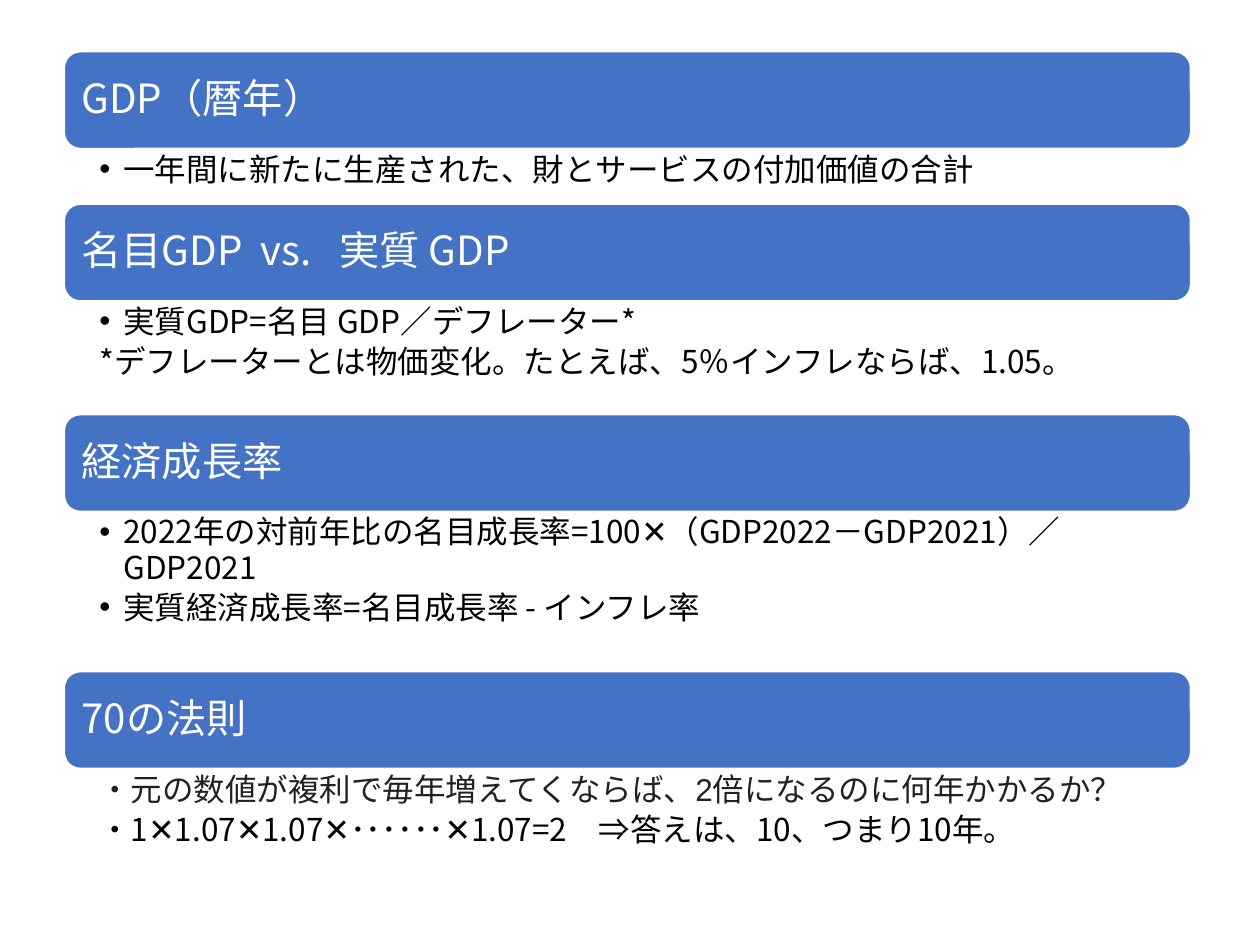
from dataclasses import dataclass

from lxml.etree import SubElement
from pptx import Presentation
from pptx.dml.color import RGBColor
from pptx.enum.shapes import MSO_SHAPE
from pptx.enum.text import MSO_ANCHOR, PP_ALIGN
from pptx.oxml.ns import qn
from pptx.util import Inches, Pt


@dataclass(frozen=True)
class Theme:
    """Colours, fonts and type sizes of the slide."""
    blue: str = "4472C4"
    white: str = "FFFFFF"
    black: str = "000000"
    charcoal: str = "202124"
    font: str = "Noto Sans CJK JP"
    question_font: str = "Arial"
    heading_size: float = 23
    body_size: float = 18


THEME = Theme()
LEFT, TOP, WIDTH = 0.51, 0.41, 8.94
HEADING_HEIGHT = 0.77
HANGING = 0.19

SECTIONS = [
    ("GDP（暦年）", 0.44, [
        ("一年間に新たに生産された、財とサービスの付加価値の合計", {"bullet": True}),
    ]),
    ("名目GDP  vs.   実質 GDP", 0.9, [
        ("実質GDP=名目 GDP／デフレーター*", {"bullet": True}),
        ("*デフレーターとは物価変化。たとえば、5％インフレならば、1.05。", {}),
    ]),
    ("経済成長率", 1.27, [
        ("2022年の対前年比の名目成長率=100✕（GDP2022－GDP2021）／GDP2021", {"bullet": True}),
        ("実質経済成長率=名目成長率 - インフレ率", {"bullet": True}),
    ]),
    ("70の法則", 0.91, [
        ("・元の数値が複利で毎年増えてくならば、2倍になるのに何年かかるか？",
         {"font": THEME.question_font, "color": THEME.charcoal}),
        ("・1✕1.07✕1.07✕･･････✕1.07=2　⇒答えは、10、つまり10年。", {}),
    ]),
]


def set_margins(frame, left, top, right, bottom):
    """Wrap the text and set its four insets in inches."""
    frame.word_wrap = True
    frame.margin_left, frame.margin_top = Inches(left), Inches(top)
    frame.margin_right, frame.margin_bottom = Inches(right), Inches(bottom)


def write_text(para, text, size=THEME.body_size, color=THEME.black, font=THEME.font,
               spacing=Pt(20), after=3, hanging=HANGING, bullet=False):
    """Write one formatted paragraph."""
    para.alignment = PP_ALIGN.LEFT
    para.line_spacing = spacing
    para.space_after = Pt(after)
    properties = para._p.get_or_add_pPr()
    properties.set("marL", str(Inches(hanging)))
    properties.set("indent", str(-Inches(hanging)))
    if bullet:
        SubElement(properties, qn("a:buFont"), typeface=THEME.question_font)
        SubElement(properties, qn("a:buChar"), char="•")
    span = para.add_run()
    span.text = text
    span.font.size = Pt(size)
    span.font.name = font
    span.font.color.rgb = RGBColor.from_string(color)
    SubElement(span._r.get_or_add_rPr(), qn("a:ea"), typeface=THEME.font)


def add_heading(page, text, top):
    """Add a rounded bar with a section heading."""
    bar = page.shapes.add_shape(MSO_SHAPE.ROUNDED_RECTANGLE, Inches(LEFT), Inches(top),
                                Inches(WIDTH), Inches(HEADING_HEIGHT))
    bar.shadow.inherit = False
    bar.fill.solid()
    bar.fill.fore_color.rgb = RGBColor.from_string(THEME.blue)
    bar.line.color.rgb = RGBColor.from_string(THEME.white)
    bar.line.width = Pt(1)
    frame = bar.text_frame
    set_margins(frame, 0.1, 0.1, 0.1, 0.1)
    frame.vertical_anchor = MSO_ANCHOR.MIDDLE
    write_text(frame.paragraphs[0], text, size=THEME.heading_size, color=THEME.white,
               spacing=0.9, after=0, hanging=0)


def add_body(page, lines, top, height):
    """Add the explanatory lines under a heading."""
    box = page.shapes.add_textbox(Inches(LEFT), Inches(top), Inches(WIDTH), Inches(height))
    frame = box.text_frame
    set_margins(frame, 0.28, 0.03, 0.14, 0.03)
    for index, (text, style) in enumerate(lines):
        para = frame.add_paragraph() if index else frame.paragraphs[0]
        write_text(para, text, **style)


def main():
    """Build the slide and save it."""
    deck = Presentation()
    deck.slide_width, deck.slide_height = Inches(10), Inches(7.5)
    page = deck.slides.add_slide(deck.slide_layouts[6])
    top = TOP
    for heading, body_height, lines in SECTIONS:
        add_heading(page, heading, top)
        add_body(page, lines, top + HEADING_HEIGHT, body_height)
        top += HEADING_HEIGHT + body_height
    deck.save("out.pptx")


if __name__ == "__main__":
    main()
